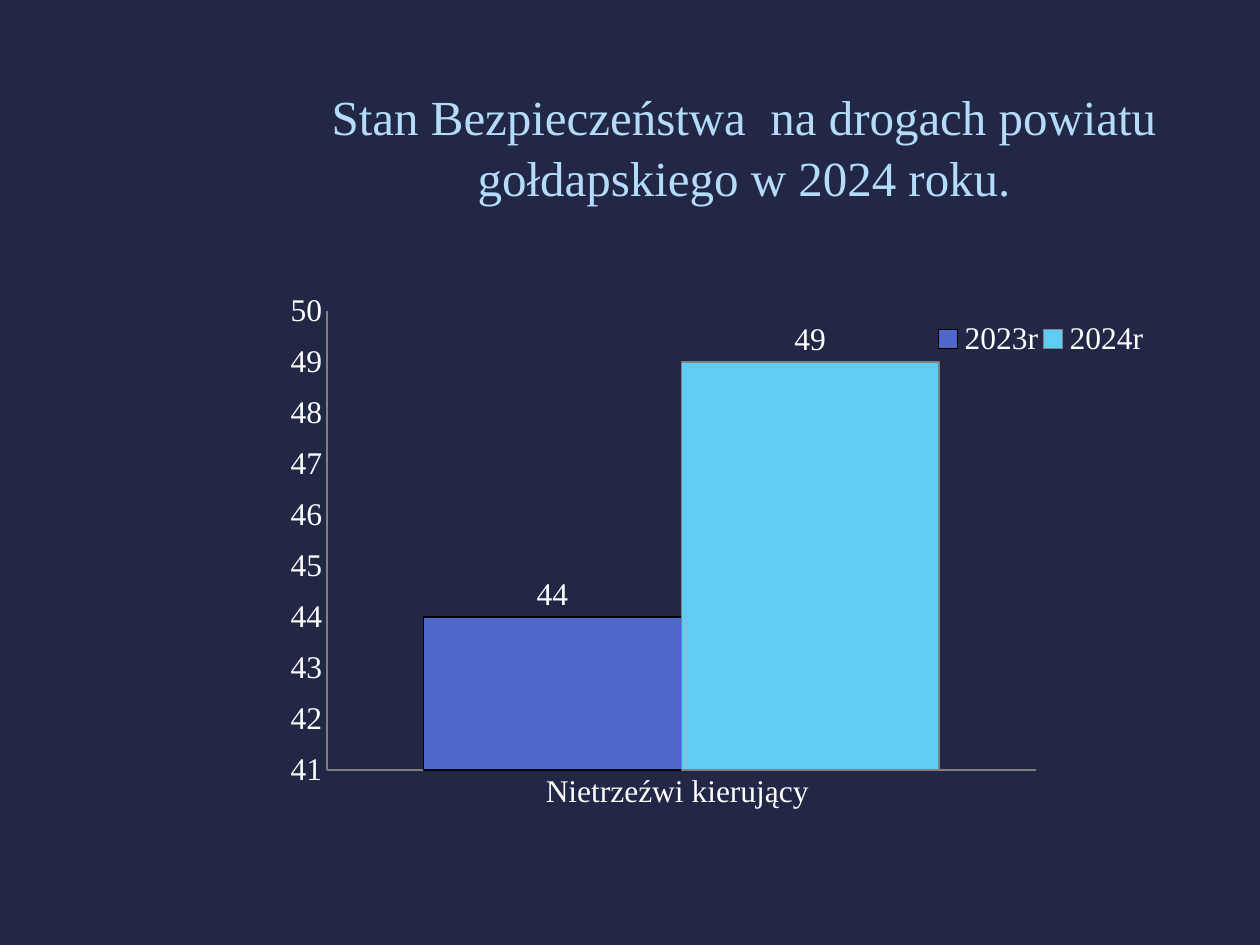
"""Build a slide comparing drunk drivers in the Gołdap district in 2023 and 2024."""
from lxml import etree
from pptx import Presentation
from pptx.chart.data import CategoryChartData
from pptx.dml.color import RGBColor
from pptx.enum.chart import XL_CHART_TYPE, XL_LABEL_POSITION, XL_LEGEND_POSITION, XL_TICK_MARK
from pptx.enum.text import MSO_ANCHOR, PP_ALIGN
from pptx.oxml.ns import qn
from pptx.util import Cm, Pt

COLUMNS = XL_CHART_TYPE.COLUMN_CLUSTERED
OUTSIDE = XL_LABEL_POSITION.OUTSIDE_END
BOTTOM = XL_LEGEND_POSITION.BOTTOM
NO_TICK = XL_TICK_MARK.NONE
MIDDLE = MSO_ANCHOR.MIDDLE
CENTER = PP_ALIGN.CENTER
TITLE_ONLY = 5


def color(value):
    return RGBColor.from_string(value)


def manual_layout(x, y, w, h, inner=False):
    layout = etree.Element(qn("c:layout"))
    manual = etree.SubElement(layout, qn("c:manualLayout"))
    settings = [("layoutTarget", "inner")] if inner else []
    settings += [("xMode", "edge"), ("yMode", "edge"), ("x", x), ("y", y), ("w", w), ("h", h)]
    for name, value in settings:
        etree.SubElement(manual, qn(f"c:{name}")).set("val", str(value))
    return layout


class SlideBuilder:
    font = "Times New Roman"
    background = "212745"
    title_color = "B4DCFA"
    text_color = "FFFFFF"
    axis_color = "808080"

    def __init__(self, deck):
        self.page = deck.slides.add_slide(deck.slide_layouts[TITLE_ONLY])
        fill = self.page.background.fill
        fill.solid()
        fill.fore_color.rgb = color(self.background)

    def style_font(self, font, size, value):
        font.name = self.font
        font.size = Pt(size)
        font.color.rgb = color(value)

    def title(self, text, left, top, width, height):
        box = self.page.shapes.title
        box.left, box.top, box.width, box.height = Cm(left), Cm(top), Cm(width), Cm(height)
        frame = box.text_frame
        frame.text = text
        frame.word_wrap = True
        frame.vertical_anchor = MIDDLE
        para = frame.paragraphs[0]
        para.alignment = CENTER
        para.line_spacing = 1.05
        self.style_font(para.font, 28, self.title_color)

    def style_axis(self, axis):
        axis.has_major_gridlines = False
        axis.major_tick_mark = axis.minor_tick_mark = NO_TICK
        axis.format.line.color.rgb = color(self.axis_color)
        axis.format.line.width = Pt(0.75)

    def column_chart(self, category, columns, left, top, width, height):
        data = CategoryChartData()
        data.categories = [category]
        for name, value, _, _ in columns:
            data.add_series(name, [value])
        frame = self.page.shapes.add_chart(COLUMNS, Cm(left), Cm(top), Cm(width), Cm(height), data)
        chart = frame.chart
        chart.has_title = False
        self.style_font(chart.font, 18, self.text_color)

        self.style_axis(chart.category_axis)
        self.style_axis(chart.value_axis)
        chart.value_axis.minimum_scale = 41
        chart.value_axis.maximum_scale = 50
        chart.value_axis.major_unit = 1

        plot = chart.plots[0]
        plot.gap_width = 75
        plot.vary_by_categories = False
        for series, (_, _, fill, line) in zip(plot.series, columns):
            series.format.fill.solid()
            series.format.fill.fore_color.rgb = color(fill)
            series.format.line.color.rgb = color(line)
            series.format.line.width = Pt(0.75)
            series.data_labels.show_value = True
            series.data_labels.position = OUTSIDE

        area = chart.element.find(".//" + qn("c:plotArea"))
        for layout in area.findall(qn("c:layout")):
            area.remove(layout)
        area.insert(0, manual_layout(0.09, 0.05, 0.76, 0.84, inner=True))
        self.legend(chart)

    def legend(self, chart):
        chart.has_legend = True
        chart.legend.position = BOTTOM
        chart.legend.include_in_layout = False
        element = chart.element.find(".//" + qn("c:legend"))
        for layout in element.findall(qn("c:layout")):
            element.remove(layout)
        element.find(qn("c:legendPos")).addnext(manual_layout(0.74, 0.07, 0.24, 0.06))


def main():
    deck = Presentation()
    deck.slide_width, deck.slide_height = Cm(25.4), Cm(19.05)
    slide = SlideBuilder(deck)
    slide.title("Stan Bezpieczeństwa  na drogach powiatu gołdapskiego w 2024 roku.",
                6.3, 1.52, 17.4, 2.8)
    columns = [("2023r", 44, "4E67C8", "000000"), ("2024r ", 49, "5ECCF3", "808080")]
    slide.column_chart("Nietrzeźwi kierujący ", columns, 4.9, 5.72, 18.8, 11.02)
    deck.save("out.pptx")


if __name__ == "__main__":
    main()
